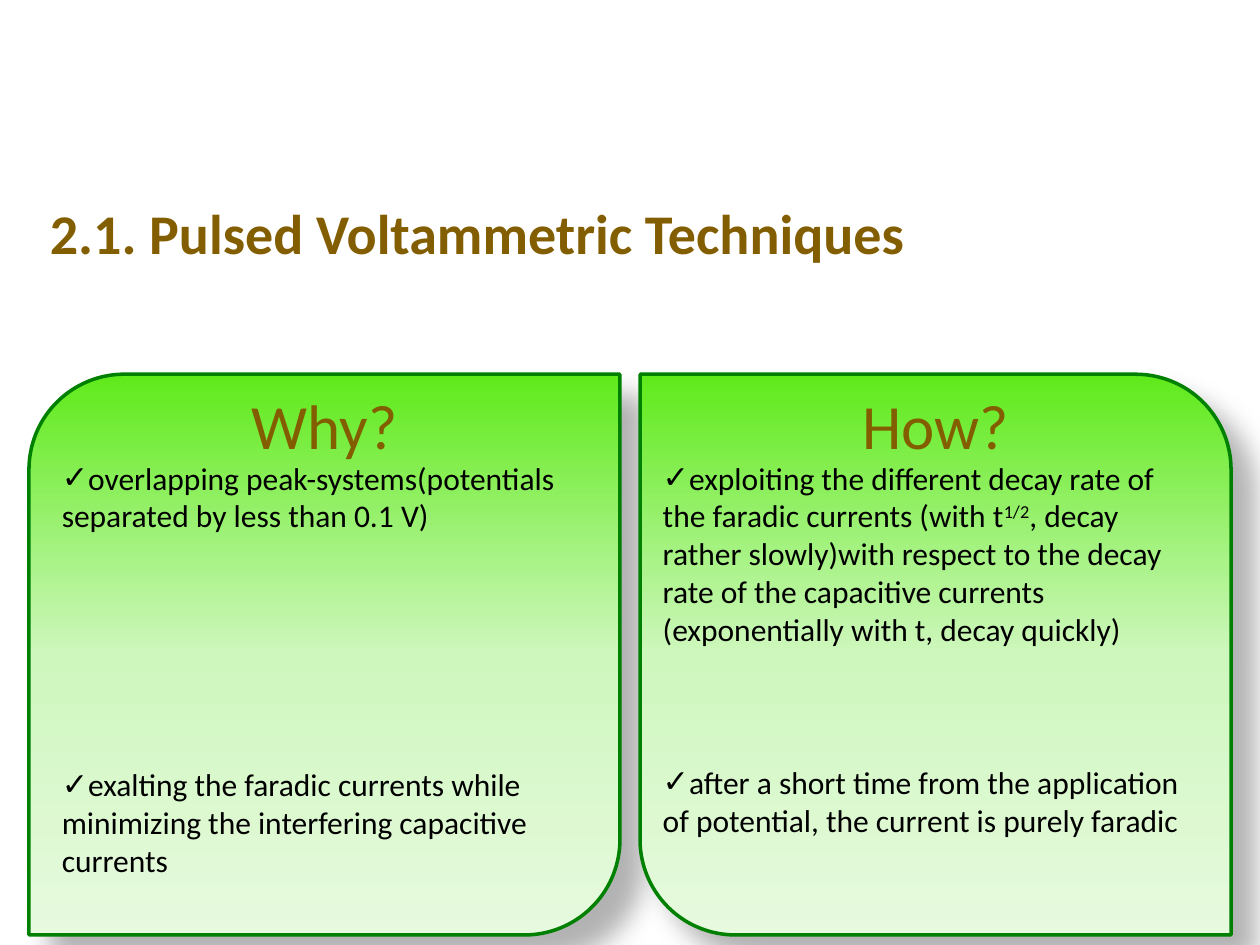
from dataclasses import dataclass

from pptx import Presentation
from pptx.dml.color import RGBColor
from pptx.enum.shapes import MSO_SHAPE
from pptx.enum.text import MSO_ANCHOR, MSO_AUTO_SIZE, PP_ALIGN
from pptx.oxml import parse_xml
from pptx.oxml.ns import nsdecls
from pptx.util import Inches, Pt

CARD_SHAPE = MSO_SHAPE.ROUND_2_DIAG_RECTANGLE
TOP, MIDDLE = MSO_ANCHOR.TOP, MSO_ANCHOR.MIDDLE
CENTER, LEFT = PP_ALIGN.CENTER, PP_ALIGN.LEFT
NO_FIT = MSO_AUTO_SIZE.NONE


@dataclass(frozen=True)
class Theme:
    font: str = "Calibri"
    heading: str = "835E01"
    text: str = "000000"
    border: str = "008000"
    gradient: tuple = ((0, "5FEA1A"), (50, "CEF7BD"), (100, "E7FADF"))
    title_size: int = 32
    card_size: int = 36
    body_size: int = 18


@dataclass(frozen=True)
class Card:
    heading: str
    left: float
    corners: tuple  # rounding of the two diagonals
    text_left: float
    text_width: float
    points: tuple  # each point is a tuple of (text, is superscript)
    gap: float  # points of space between the list items


THEME = Theme()
ROUND = 0.17
CARD_TOP, CARD_WIDTH, CARD_HEIGHT = 2.97, 4.69, 4.45
TEXT_TOP, TEXT_HEIGHT = 3.59, 3.43

CARDS = (
    Card("Why?", 0.23, (ROUND, 0), 0.39, 4.38, (
        (("overlapping peak-systems(potentials separated by less than 0.1 V)", False),),
        (("exalting the faradic currents while minimizing the interfering "
          "capacitive currents", False),),
    ), 132),
    Card("How?", 5.08, (0, ROUND), 5.16, 4.3, (
        (("exploiting the different decay rate of the faradic currents (with t", False),
         ("1/2", True),
         (", decay rather slowly)with respect to the decay rate of the capacitive "
          "currents (exponentially with t, decay quickly)", False)),
        (("after a short time from the application of potential, the current is "
          "purely faradic", False),),
    ), 66),
)


def style_font(font, size: int, color: str, bold: bool = False) -> None:
    font.name = THEME.font
    font.size = Pt(size)
    font.bold = bold
    font.color.rgb = RGBColor.from_string(color)


def place(sp, left: float, top: float, width: float, height: float) -> None:
    sp.left, sp.top = Inches(left), Inches(top)
    sp.width, sp.height = Inches(width), Inches(height)


def add_gradient_and_shadow(sp) -> None:
    stops = "".join(
        f'<a:gs pos="{pos * 1000}"><a:srgbClr val="{color}"/></a:gs>'
        for pos, color in THEME.gradient)
    sp.fill.background()
    props = sp._element.spPr
    no_fill = props.find("{*}noFill")
    props.replace(no_fill, parse_xml(
        f'<a:gradFill {nsdecls("a")} rotWithShape="1"><a:gsLst>{stops}</a:gsLst>'
        '<a:lin ang="5400000" scaled="0"/></a:gradFill>'))
    props.append(parse_xml(
        f'<a:effectLst {nsdecls("a")}><a:outerShdw blurRad="{Pt(15)}" '
        f'dist="{Pt(18)}" dir="2700000" algn="tl" rotWithShape="0">'
        '<a:srgbClr val="000000"><a:alpha val="30000"/></a:srgbClr>'
        '</a:outerShdw></a:effectLst>'))


def draw_card(s, card: Card):
    sp = s.shapes.add_shape(CARD_SHAPE, Inches(card.left), Inches(CARD_TOP),
                            Inches(CARD_WIDTH), Inches(CARD_HEIGHT))
    sp.adjustments[0], sp.adjustments[1] = card.corners
    sp.line.color.rgb = RGBColor.from_string(THEME.border)
    sp.line.width = Pt(2)
    add_gradient_and_shadow(sp)
    tf = sp.text_frame
    tf.text = card.heading
    tf.vertical_anchor = TOP
    tf.margin_top = 0
    p = tf.paragraphs[0]
    p.alignment = CENTER
    p.line_spacing = 0.78
    style_font(p.runs[0].font, THEME.card_size, THEME.heading)
    return sp


def fill_list(sp, card: Card) -> None:
    place(sp, card.text_left, TEXT_TOP, card.text_width, TEXT_HEIGHT)
    tf = sp.text_frame
    tf.word_wrap = True
    tf.auto_size = NO_FIT
    tf.vertical_anchor = TOP
    for i, point in enumerate(card.points):
        p = tf.add_paragraph() if i else tf.paragraphs[0]
        p.alignment = LEFT
        p.space_before = Pt(card.gap if i else 0)
        props = p._p.get_or_add_pPr()
        props.set("marL", "0")
        props.set("indent", "0")
        props.append(parse_xml(f'<a:buChar {nsdecls("a")} char="✓"/>'))
        for text, superscript in point:
            r = p.add_run()
            r.text = text
            style_font(r.font, THEME.body_size, THEME.text)
            if superscript:
                r.font._element.set("baseline", "30000")


def main() -> None:
    prs = Presentation()
    prs.slide_width, prs.slide_height = Inches(10), Inches(7.5)
    s = prs.slides.add_slide(prs.slide_layouts[3])

    # Title
    title = s.shapes.title
    place(title, 0, 1.33, 7.58, 1.02)
    tf = title.text_frame
    tf.text = "2.1. Pulsed Voltammetric Techniques"
    tf.auto_size = NO_FIT
    tf.vertical_anchor = MIDDLE
    tf.paragraphs[0].alignment = CENTER
    style_font(tf.paragraphs[0].runs[0].font, THEME.title_size, THEME.heading, True)

    # Cards, each placed behind its list
    lists = [sp for sp in s.placeholders if sp.placeholder_format.idx in (1, 2)]
    for card, body in zip(CARDS, lists):
        sp = draw_card(s, card)
        lists[0]._element.addprevious(sp._element)
        fill_list(body, card)

    prs.save("out.pptx")


if __name__ == "__main__":
    main()
